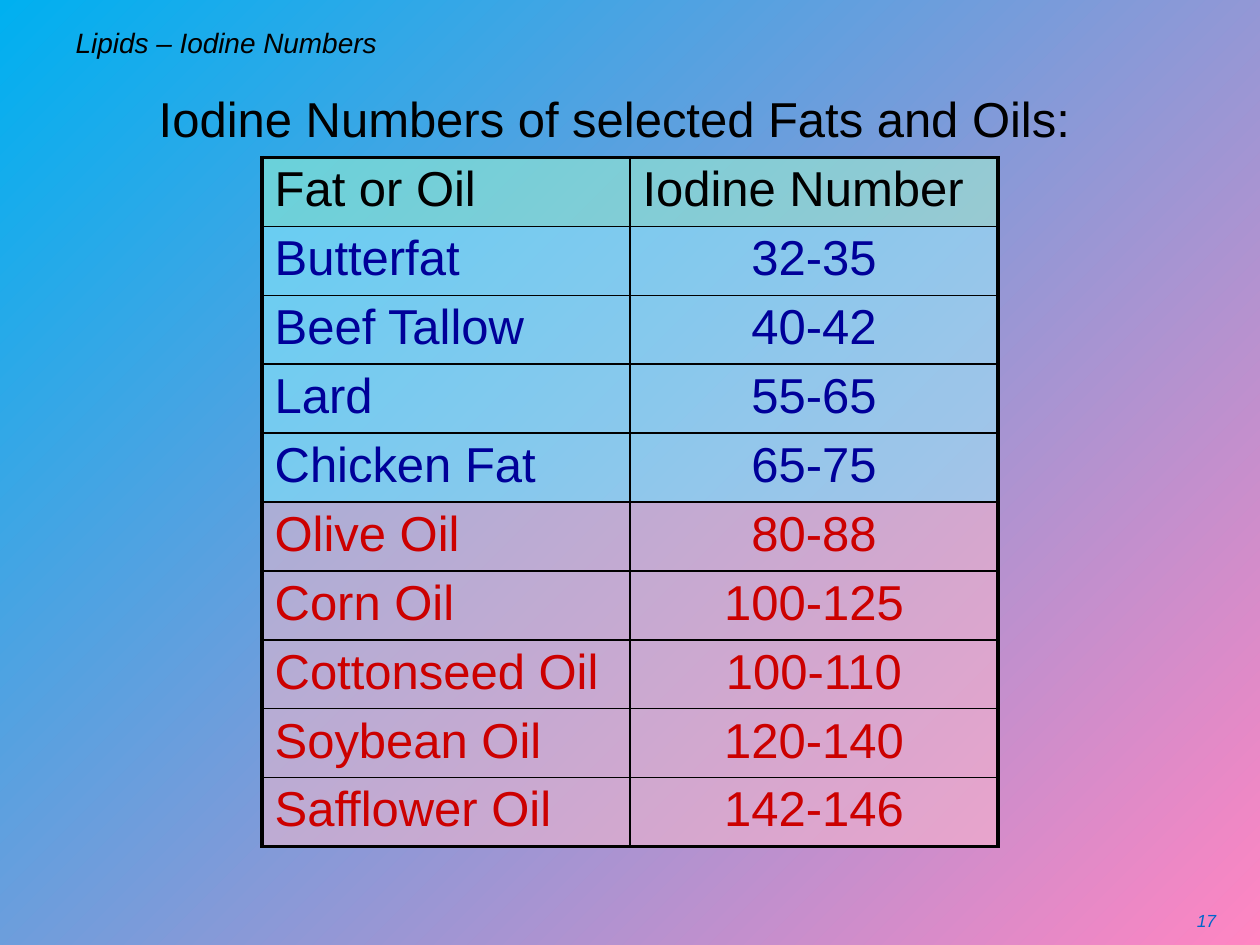
from lxml.etree import SubElement
from pptx import Presentation
from pptx.dml.color import RGBColor
from pptx.enum.text import MSO_ANCHOR as Anchor, PP_ALIGN as Align
from pptx.oxml.ns import qn
from pptx.util import Inches, Pt

HEADER = ("Fat or Oil", "Iodine Number")
FATS = [
    ("Butterfat", "32-35"),
    ("Beef Tallow", "40-42"),
    ("Lard", "55-65"),
    ("Chicken Fat", "65-75"),
]
OILS = [
    ("Olive Oil", "80-88"),
    ("Corn Oil", "100-125"),
    ("Cottonseed Oil", "100-110"),
    ("Soybean Oil", "120-140"),
    ("Safflower Oil", "142-146"),
]

BLACK = RGBColor(0x00, 0x00, 0x00)
NAVY = RGBColor(0x00, 0x00, 0x99)
RED = RGBColor(0xCC, 0x00, 0x00)
BLUE = RGBColor(0x00, 0x66, 0xCC)
MINT = RGBColor(0xA3, 0xFB, 0xCF)
AQUA = RGBColor(0x9B, 0xF5, 0xFF)
ROSE = RGBColor(0xFC, 0xBC, 0xCE)
SKY = RGBColor(0x00, 0xB0, 0xF0)
PINK = RGBColor(0xFF, 0x85, 0xC2)

OUTER, INNER = 2.25, 1


def write(frame, text, size=28, color=BLACK, align=Align.LEFT, italic=False):
    para = frame.paragraphs[0]
    para.alignment = align
    span = para.add_run()
    span.text = text
    font = span.font
    font.name, font.size, font.italic = "Arial", Pt(size), italic
    font.color.rgb = color


def place(shape, left, top, width, height):
    shape.left, shape.top = Inches(left), Inches(top)
    shape.width, shape.height = Inches(width), Inches(height)


def add_text(page, area, text, **style):
    box = page.shapes.add_textbox(*map(Inches, area))
    box.text_frame.word_wrap = True
    write(box.text_frame, text, **style)


def paint(cell, fill, edges):
    cell.fill.solid()
    cell.fill.fore_color.rgb = fill
    props = cell._tc.get_or_add_tcPr()
    SubElement(props.find(".//" + qn("a:srgbClr")), qn("a:alpha"), val="50000")
    for index, (side, outer) in enumerate(edges):
        width = Pt(OUTER if outer else INNER)
        line = props.makeelement(qn(f"a:ln{side}"), {"w": str(width)})
        SubElement(SubElement(line, qn("a:solidFill")), qn("a:srgbClr"), val=str(BLACK))
        props.insert(index, line)


def add_iodine_table(page):
    rows = [(HEADER, BLACK, MINT)]
    rows += [(row, NAVY, AQUA) for row in FATS]
    rows += [(row, RED, ROSE) for row in OILS]
    area = map(Inches, (2.08, 1.25, 5.84, 5.34))
    table = page.shapes.add_table(len(rows), len(HEADER), *area).table
    table.first_row = table.horz_banding = False
    last_row, last_column = len(rows) - 1, len(HEADER) - 1
    for r, (values, color, fill) in enumerate(rows):
        for c, value in enumerate(values):
            cell = table.cell(r, c)
            cell.margin_top = cell.margin_bottom = Inches(0.04)
            align = Align.CENTER if r and c else Align.LEFT
            write(cell.text_frame, value, color=color, align=align)
            edges = [("L", c == 0), ("R", c == last_column),
                     ("T", r == 0), ("B", r == last_row)]
            paint(cell, fill, edges)


def main():
    deck = Presentation()
    deck.slide_width, deck.slide_height = Inches(10), Inches(7.5)
    page = deck.slides.add_slide(deck.slide_layouts[5])

    backdrop = page.background.fill
    backdrop.gradient()
    backdrop.gradient_angle = 315
    for stop, color in zip(backdrop.gradient_stops, (SKY, PINK)):
        stop.color.rgb = color

    title = page.shapes.title
    place(title, 0.5, 0.17, 9, 0.33)
    title.text_frame.vertical_anchor = Anchor.MIDDLE
    write(title.text_frame, "Lipids – Iodine Numbers", size=16, italic=True)

    add_text(page, (0.5, 0.65, 8.75, 0.55),
             "Iodine Numbers of selected Fats and Oils:", align=Align.CENTER)
    add_iodine_table(page)
    add_text(page, (9.17, 7.17, 0.58, 0.33), "17",
             size=10, color=BLUE, align=Align.RIGHT, italic=True)
    deck.save("out.pptx")


if __name__ == "__main__":
    main()
